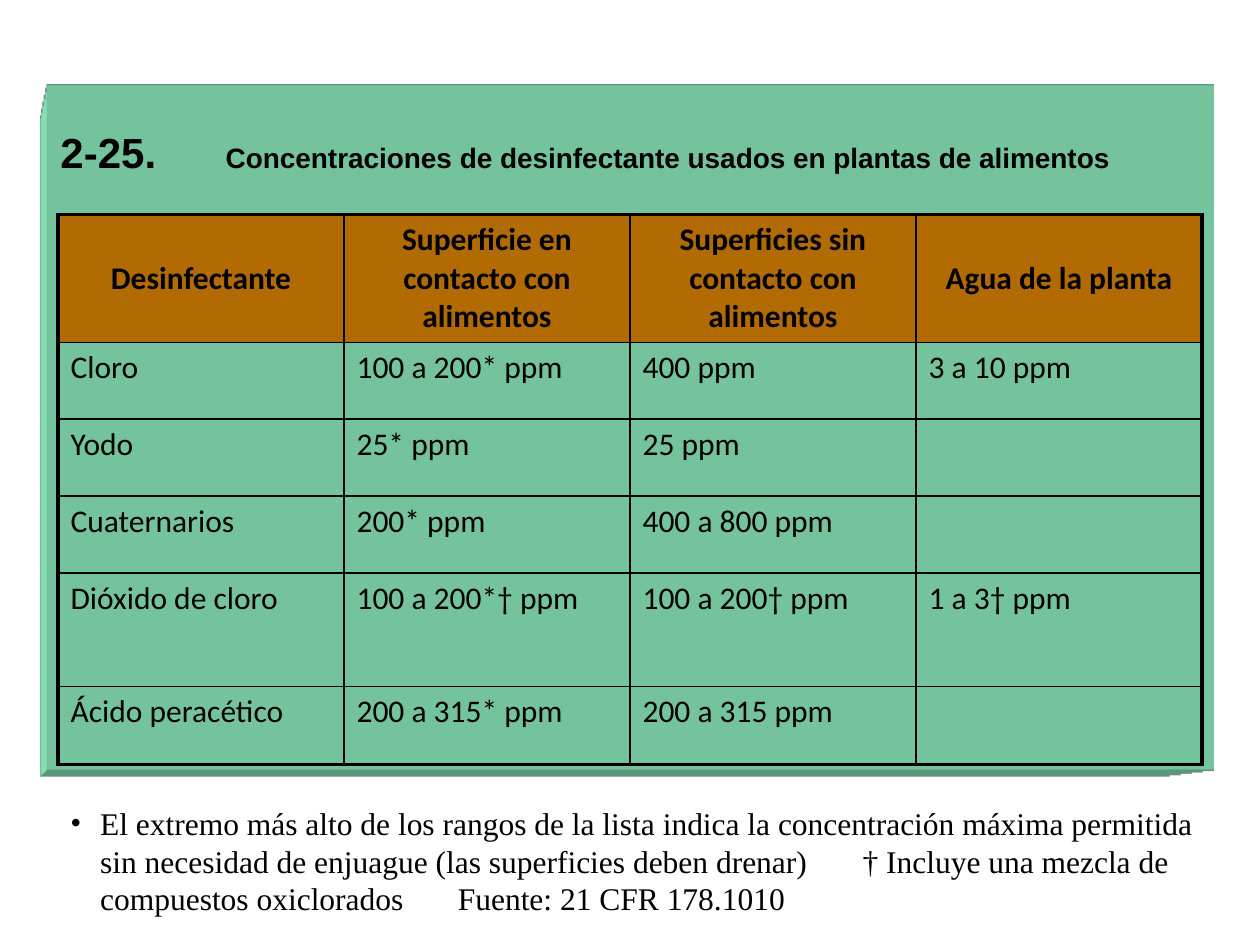
from lxml.etree import SubElement as Sub
from pptx import Presentation
from pptx.dml.color import RGBColor as Rgb
from pptx.enum.shapes import MSO_SHAPE as Kind
from pptx.enum.text import MSO_ANCHOR as Anchor, PP_ALIGN as Align
from pptx.oxml import parse_xml as to_xml
from pptx.oxml.ns import nsdecls, qn
from pptx.util import Cm, Pt

HEADS = ["Desinfectante", "Superficie en contacto con alimentos",
         "Superficies sin contacto con alimentos", "Agua de la planta"]
ROWS = [
    ["Cloro", "100 a 200* ppm", "400 ppm", "3 a 10 ppm"],
    ["Yodo", "25* ppm", "25 ppm", ""],
    ["Cuaternarios", "200* ppm", "400 a 800 ppm", ""],
    ["Dióxido de cloro", "100 a 200*† ppm", "100 a 200† ppm", "1 a 3† ppm"],
    ["Ácido peracético", "200 a 315* ppm", "200 a 315 ppm", ""],
]
TALL = [2.51, 1.55, 1.55, 1.55, 2.29, 1.57]
NOTE = ("El extremo más alto de los rangos de la lista indica la concentración "
        "máxima permitida sin necesidad de enjuague (las superficies deben drenar)"
        "\t† Incluye una mezcla de compuestos oxiclorados\tFuente: 21 CFR 178.1010")


def color(code):
    return Rgb.from_string(code)


class Deck:
    ink, mint, rust = "000000", "99FFCC", "B26B02"
    thin, thick = 1, 2.25

    def __init__(self):
        self.show = Presentation()
        self.show.slide_width, self.show.slide_height = Cm(25.4), Cm(19.05)
        self.slide = self.show.slides.add_slide(self.show.slide_layouts[6])

    def style(self, run, face, size, bold=False):
        font = run.font
        font.name, font.size, font.bold = face, Pt(size), bold
        font.color.rgb = color(self.ink)

    def tabs(self, para, *stops):
        tabs = Sub(para._p.get_or_add_pPr(), qn("a:tabLst"))
        for stop in stops:
            Sub(tabs, qn("a:tab"), pos=str(Cm(stop)), algn="l")

    def panel(self, x, y, w, h, mark, title):
        box = self.slide.shapes.add_shape(Kind.RECTANGLE, Cm(x), Cm(y), Cm(w), Cm(h))
        box.shadow.inherit = False
        box.fill.solid()
        box.fill.fore_color.rgb = color(self.mint)
        box.line.fill.background()
        props = box._element.spPr
        props.append(to_xml(
            f'<a:scene3d {nsdecls("a")}><a:camera prst="legacyPerspectiveBottomLeft"/>'
            '<a:lightRig rig="legacyFlat3" dir="t"/></a:scene3d>'))
        props.append(to_xml(
            f'<a:sp3d {nsdecls("a")} extrusionH="430200" prstMaterial="legacyMatte">'
            f'<a:extrusionClr><a:srgbClr val="{self.mint}"/></a:extrusionClr></a:sp3d>'))
        frame = box.text_frame
        frame.vertical_anchor = Anchor.TOP
        frame.margin_top = Cm(0.86)
        para = frame.paragraphs[0]
        para.alignment = Align.LEFT
        self.tabs(para, 3.33)
        for text, size in ((mark + "\t", 24), (title, 16)):
            run = para.add_run()
            run.text = text
            self.style(run, "Arial", size, True)

    def edges(self, cell, sides):
        props = cell._tc.get_or_add_tcPr()
        for side, width in sides.items():
            line = Sub(props, qn("a:ln" + side), w=str(Pt(width)))
            Sub(Sub(line, qn("a:solidFill")), qn("a:srgbClr"), val=self.ink)

    def table(self, x, y, w, heads, rows, tall):
        data = [heads] + rows
        last, end = len(data) - 1, len(heads) - 1
        grid = self.slide.shapes.add_table(
            len(data), len(heads), Cm(x), Cm(y), Cm(w), Cm(sum(tall))).table
        grid.first_row = grid.horz_banding = False
        for r, line in enumerate(data):
            grid.rows[r].height = Cm(tall[r])
            for c, text in enumerate(line):
                cell = grid.cell(r, c)
                rims = {"L": c == 0, "R": c == end, "T": r == 0, "B": r == last}
                self.edges(cell, {k: self.thick if rim else self.thin
                                  for k, rim in rims.items()})
                self.fill(cell, text, r == 0)

    def fill(self, cell, text, head):
        cell.text_frame.text = text
        para = cell.text_frame.paragraphs[0]
        if head:
            cell.fill.solid()
            cell.fill.fore_color.rgb = color(self.rust)
            cell.vertical_anchor = Anchor.MIDDLE
            para.alignment = Align.CENTER
        else:
            cell.fill.background()
        for run in para.runs:
            self.style(run, "Calibri", 18, head)

    def note(self, x, y, w, h, text):
        frame = self.slide.shapes.add_textbox(Cm(x), Cm(y), Cm(w), Cm(h)).text_frame
        frame.word_wrap = True
        frame.text = text
        para = frame.paragraphs[0]
        props = para._p.get_or_add_pPr()
        props.set("marL", str(Cm(0.6)))
        props.set("indent", str(-Cm(0.6)))
        Sub(props, qn("a:buFont"), typeface="Times New Roman")
        Sub(props, qn("a:buChar"), char="•")
        self.tabs(para, 7.81, 15.97)
        self.style(para.runs[0], "Times New Roman", 18)


def main():
    deck = Deck()
    deck.panel(0.97, 1.7, 23.5, 13.82, "2-25.",
               "Concentraciones de desinfectante usados en plantas de alimentos")
    deck.table(1.17, 4.32, 23.06, HEADS, ROWS, TALL)
    deck.note(1.17, 16.08, 23.5, 2.57, NOTE)
    deck.show.save("out.pptx")


if __name__ == "__main__":
    main()
